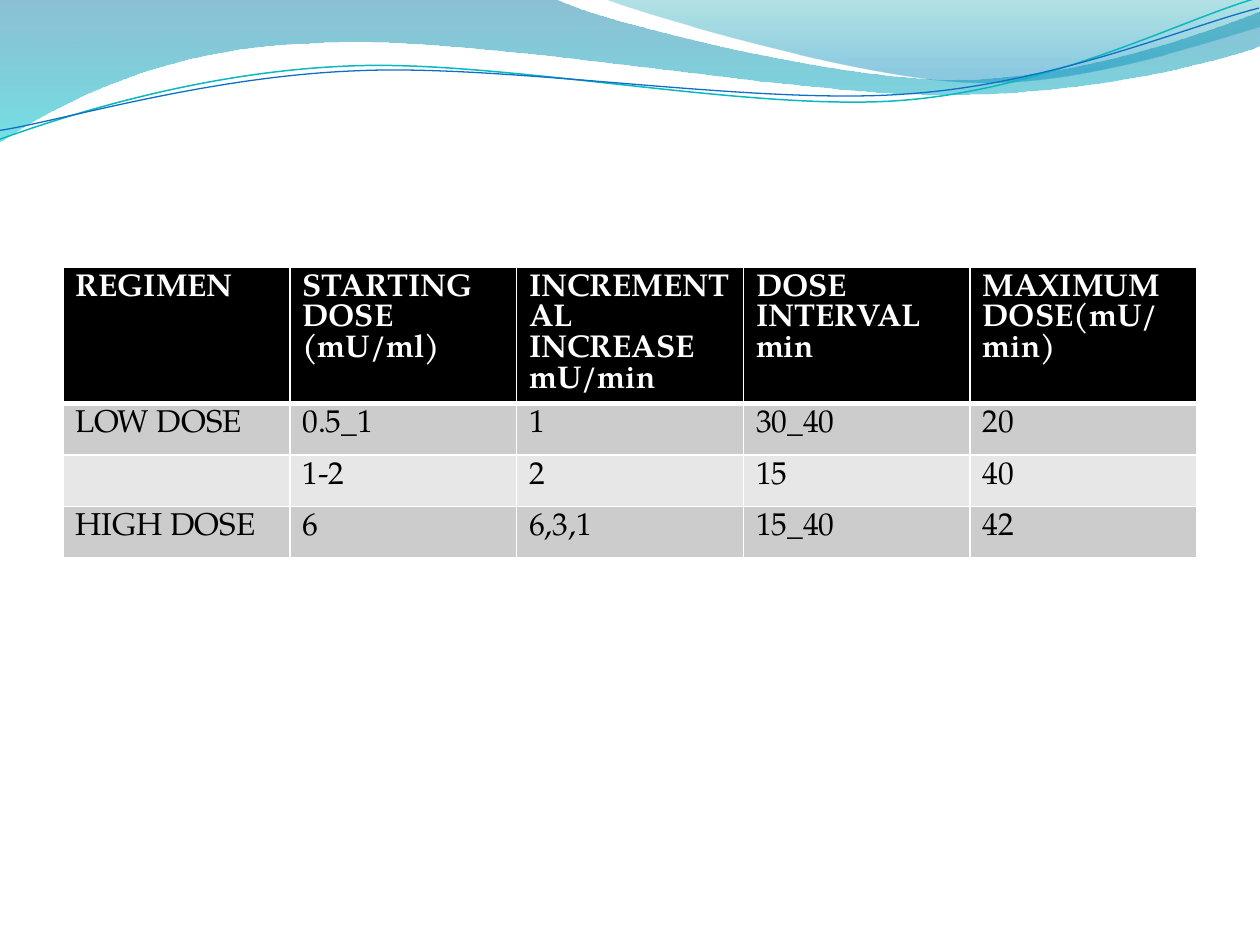
from lxml.etree import SubElement
from pptx import Presentation
from pptx.dml.color import RGBColor
from pptx.oxml.ns import qn
from pptx.util import Inches, Pt

TOP_WAVE = [
    [(0, 0)],
    [(4.4, -0.01)],
    [(4.76, 0.17), (6.64, 0.63), (7.58, 0.63)],
    [(8.53, 0.63), (9.58, 0.26), (10, 0.09)],
    [(10.01, 0.36)],
    [(9.83, 0.44), (8.7, 0.76), (7.46, 0.75)],
    [(6.22, 0.75), (3.82, 0.28), (2.57, 0.34)],
    [(1.29, 0.36), (0.46, 0.83), (-0.01, 1.13)],
    [(0, 0)],
]
RIGHT_WAVE = [
    [(4.79, -0.01)],
    [(5.09, 0.11), (6.82, 0.62), (7.69, 0.65)],
    [(8.56, 0.69), (9.61, 0.32), (10, 0.21)],
    [(10, 0)],
    [(4.79, -0.01)],
]
TEAL_LINE = [
    [(-0.02, 0.87)],
    [(0.47, 0.72), (1.58, 0.41), (2.77, 0.42)],
    [(3.96, 0.42), (5.91, 0.93), (7.12, 0.9)],
    [(8.32, 0.87), (9.4, 0.36), (10, 0.22)],
]
BLUE_LINE = [
    [(-0.02, 0.8)],
    [(0.46, 0.75), (1.64, 0.45), (2.83, 0.46)],
    [(4.03, 0.46), (5.96, 0.88), (7.16, 0.85)],
    [(8.35, 0.83), (9.42, 0.42), (10.01, 0.3)],
]
REGIMENS = [
    ["REGIMEN", "STARTING DOSE (mU/ml)", "INCREMENTAL INCREASE\nmU/min",
     "DOSE INTERVAL\nmin", "MAXIMUM DOSE(mU/min)"],
    ["LOW DOSE", "0.5_1", "1", "30_40", "20"],
    ["", "1-2", "2", "15", "40"],
    ["HIGH DOSE", "6", "6,3,1", "15_40", "42"],
]


def rgb(value):
    return RGBColor.from_string(value)


class Deck:
    """Holds the style and the current slide."""

    font, size = "TeX Gyre Pagella", 18
    header, bands, border = "000000", ("CCCCCC", "E7E7E7"), "FFFFFF"

    def __init__(self):
        self.prs = Presentation()
        self.prs.slide_width, self.prs.slide_height = Inches(10), Inches(7.5)
        self.s = self.prs.slides.add_slide(self.prs.slide_layouts[6])

    def outline(self, segments, close):
        points = [(Inches(x), Inches(y)) for seg in segments for x, y in seg]
        builder = self.s.shapes.build_freeform(*points[0])
        builder.add_line_segments(points[1:], close=close)
        sp = builder.convert_to_shape()
        sp.shadow.inherit = False
        steps = iter(list(sp._element.iter(qn("a:lnTo"))))
        for seg in segments[1:]:
            first, *rest = [next(steps) for _ in seg]
            if rest:
                first.tag = qn("a:cubicBezTo")
            for step in rest:
                first.append(step[0])
                step.getparent().remove(step)
        return sp

    def wave(self, segments, stops):
        sp = self.outline(segments, True)
        sp.line.fill.background()
        sp.fill.gradient()
        sp.fill.gradient_angle = 270
        for stop, (position, color, _) in zip(sp.fill.gradient_stops, stops):
            stop.position = position
            stop.color.rgb = rgb(color)
        colors = sp._element.spPr.iter(qn("a:srgbClr"))
        for clr, (_, _, opacity) in zip(colors, stops):
            SubElement(clr, qn("a:alpha"), val=str(opacity * 1000))

    def curve(self, segments, color, width):
        sp = self.outline(segments, False)
        sp.rotation = 357.3
        sp.fill.background()
        sp.line.color.rgb = rgb(color)
        sp.line.width = Pt(width)

    def borders(self, cell, top, bottom):
        tc_pr = cell._tc.get_or_add_tcPr()
        for side, width in zip("LRTB", (1, 1, top, bottom)):
            ln = SubElement(tc_pr, qn(f"a:ln{side}"), w=str(Pt(width)))
            fill = SubElement(ln, qn("a:solidFill"))
            SubElement(fill, qn("a:srgbClr"), val=self.border)

    def cell(self, cell, text, row):
        self.borders(cell, 3 if row == 1 else 1, 3 if row == 0 else 1)
        cell.fill.solid()
        cell.fill.fore_color.rgb = rgb(self.bands[(row - 1) % 2] if row else self.header)
        cell.text = text
        for p in cell.text_frame.paragraphs:
            p.font.name, p.font.size, p.font.bold = self.font, Pt(self.size), row == 0
            p.font.color.rgb = rgb("000000" if row else "FFFFFF")

    def table(self, rows, left, top, width, height, row_height):
        frame = self.s.shapes.add_table(len(rows), len(rows[0]), Inches(left), Inches(top),
                                        Inches(width), Inches(height))
        for i, texts in enumerate(rows):
            frame.table.rows[i].height = Inches(row_height)
            for j, text in enumerate(texts):
                self.cell(frame.table.cell(i, j), text, i)
        frame.height = Inches(height)


def main():
    deck = Deck()
    deck.wave(TOP_WAVE, [(0, "0074A1", 45), (1, "00C6CF", 55)])
    deck.wave(RIGHT_WAVE, [(0, "00A1A9", 30), (0.8, "008BBF", 45)])
    deck.curve(TEAL_LINE, "0AB8BF", 0.85)
    deck.curve(BLUE_LINE, "0F6FC6", 0.75)
    deck.table(REGIMENS, 0.5, 2.12, 9, 2.22, 0.41)
    deck.prs.save("out.pptx")


if __name__ == "__main__":
    main()
